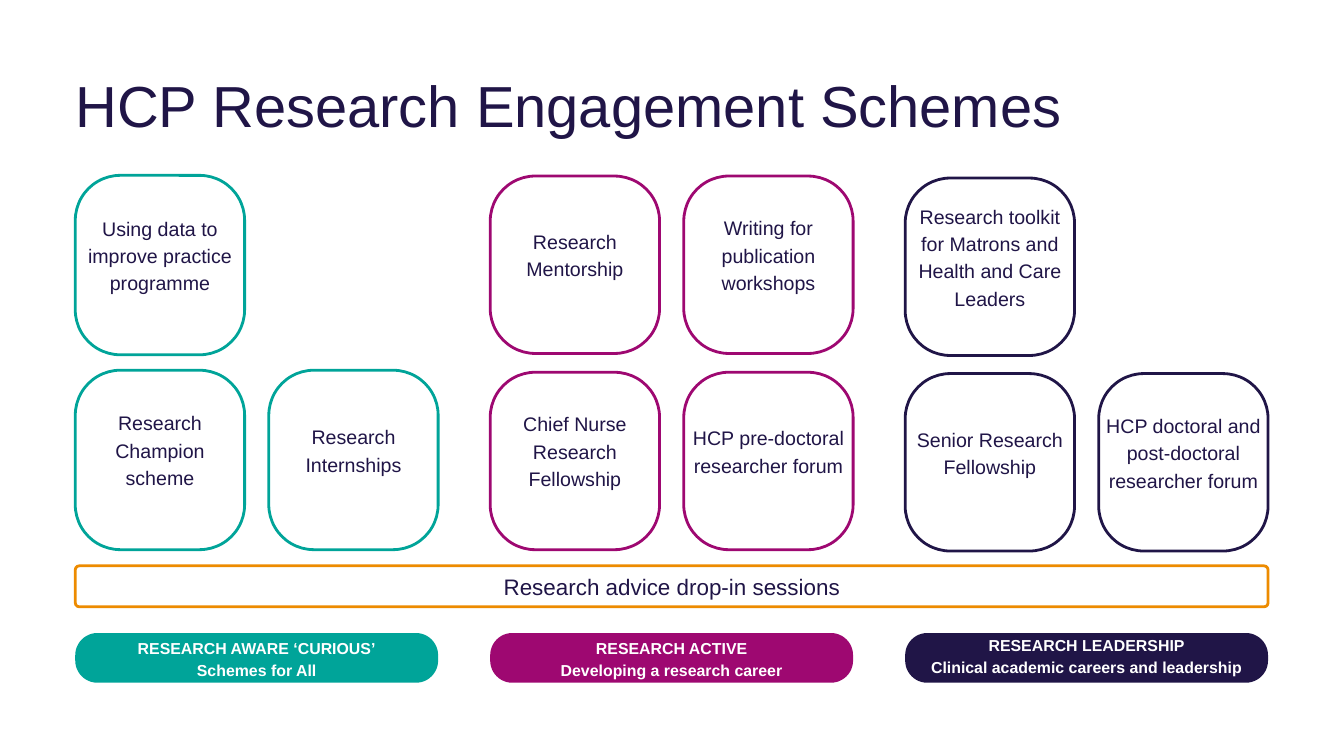
from pptx import Presentation
from pptx import util as u
from pptx.dml.color import RGBColor
from pptx.enum import shapes, text

TEAL = RGBColor(0x00, 0xA4, 0x99)
PLUM = RGBColor(0x9E, 0x08, 0x71)
NAVY = RGBColor(0x20, 0x15, 0x47)
GOLD = RGBColor(0xED, 0x8B, 0x00)
WHITE = RGBColor(0xFF, 0xFF, 0xFF)

LEFT, PITCH, STEP = 1.12, 6.175, 2.88
CARD, PILL, WIDE = 2.52, 5.4, 17.75
LIFT = 0.34

STAGES = [
    (TEAL, (2.61, 5.51), 2.67, 9.28,
     ["RESEARCH AWARE ‘CURIOUS’", "Schemes for All"],
     [(0, 0, "Using data to improve practice programme"),
      (1, 0, "Research Champion scheme"),
      (1, 1, "Research Internships")]),
    (PLUM, (2.62, 5.54), 2.64, 9.28,
     ["RESEARCH ACTIVE", "Developing a research career"],
     [(0, 0, "Research Mentorship"),
      (0, 1, "Writing for publication workshops"),
      (1, 0, "Chief Nurse Research Fellowship"),
      (1, 1, "HCP pre-doctoral researcher forum")]),
    (NAVY, (2.65, 5.56), 2.64, 9.23,
     ["RESEARCH LEADERSHIP", "Clinical academic careers and leadership"],
     [(0, 0, "Research toolkit for Matrons and Health and Care Leaders"),
      (1, 0, "Senior Research Fellowship"),
      (1, 1, "HCP doctoral and post-doctoral researcher forum")]),
]


class Deck:
    font = "Arial"
    pad = 0.06
    line = 3

    def __init__(self, slide):
        self.slide = slide

    def place(self, shape, box):
        shape.left, shape.top, shape.width, shape.height = map(u.Inches, box)

    def typeset(self, frame, lines, size, lead, color, bold=False,
                align=text.PP_ALIGN.CENTER, pad=pad):
        frame.word_wrap = True
        frame.margin_left = frame.margin_right = u.Inches(pad)
        frame.margin_top = frame.margin_bottom = u.Inches(pad)
        for i, words in enumerate(lines):
            para = frame.add_paragraph() if i else frame.paragraphs[0]
            para.alignment = align
            para.line_spacing = u.Pt(lead)
            para.space_before = u.Pt(0)
            run = para.add_run()
            run.text = words
            run.font.name = self.font
            run.font.size = u.Pt(size)
            run.font.bold = bold
            run.font.color.rgb = color

    def title(self, words, box):
        shape = self.slide.shapes.title
        self.place(shape, box)
        frame = shape.text_frame
        frame.auto_size = text.MSO_AUTO_SIZE.NONE
        frame.vertical_anchor = text.MSO_ANCHOR.TOP
        self.typeset(frame, [words], 62, 86.8, NAVY,
                     align=text.PP_ALIGN.LEFT, pad=0)

    def label(self, lines, box, size, lead, color=NAVY, bold=False):
        shape = self.slide.shapes.add_textbox(*map(u.Inches, box))
        frame = shape.text_frame
        frame.vertical_anchor = text.MSO_ANCHOR.MIDDLE
        self.typeset(frame, lines, size, lead, color, bold)

    def round(self, box, radius, color, solid=False):
        shape = self.slide.shapes.add_shape(
            shapes.MSO_SHAPE.ROUNDED_RECTANGLE, *map(u.Inches, box))
        shape.adjustments[0] = radius / min(box[2:])
        shape.shadow.inherit = False
        if solid:
            shape.fill.solid()
            shape.fill.fore_color.rgb = color
            shape.line.fill.background()
        else:
            shape.fill.background()
            shape.line.color.rgb = color
            shape.line.width = u.Pt(self.line)

    def card(self, words, left, top, high, color):
        self.round((left, top, CARD, high), 0.67, color)
        self.label([words], (left, top - LIFT, CARD, high + LIFT), 21, 29.4)

    def pill(self, lines, left, top, color):
        self.round((left, 9.42, PILL, 0.74), 0.33, color, solid=True)
        self.label(lines, (left, top, PILL, 1.02), 17, 23.8, WHITE, True)

    def bar(self, words):
        self.round((LEFT, 8.42, WIDE, 0.61), 0.06, GOLD)
        self.label([words], (LEFT, 8.21, WIDE, 0.96), 24, 33.6)


def main():
    show = Presentation()
    show.slide_width, show.slide_height = u.Inches(20), u.Inches(11.25)
    deck = Deck(show.slides.add_slide(show.slide_layouts[5]))
    deck.title("HCP Research Engagement Schemes", (LEFT, 0.86, 14.69, 1.29))
    for i, (color, rows, high, top, lines, cards) in enumerate(STAGES):
        left = LEFT + i * PITCH
        deck.pill(lines, left, top, color)
        for row, col, words in cards:
            deck.card(words, left + col * STEP, rows[row], high, color)
    deck.bar("Research advice drop-in sessions")
    show.save("out.pptx")


if __name__ == "__main__":
    main()
